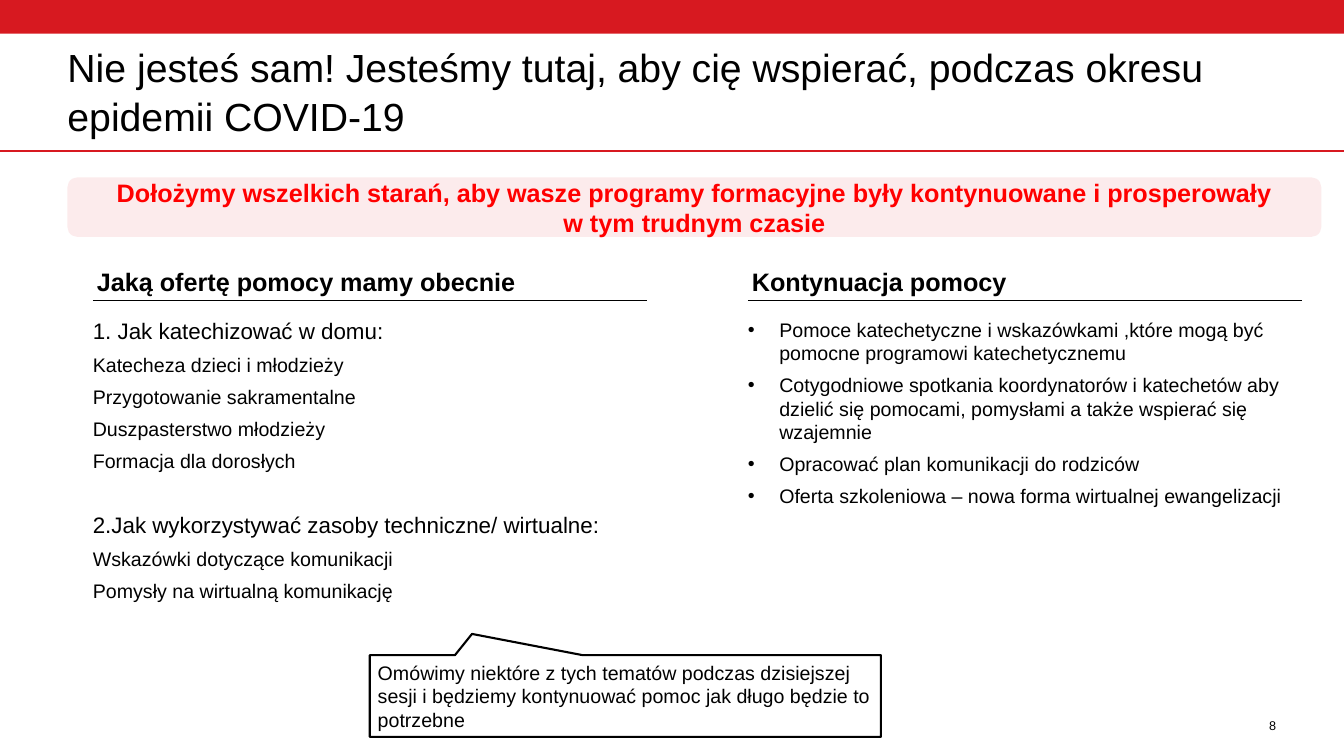
import pptx
import pptx.dml.color
import pptx.enum.shapes
import pptx.enum.text
import pptx.oxml
import pptx.oxml.ns
import pptx.util
from pptx.util import Cm

RED = pptx.dml.color.RGBColor(0xD7, 0x19, 0x20)
BRIGHT_RED = pptx.dml.color.RGBColor(0xFF, 0x00, 0x00)
PINK = pptx.dml.color.RGBColor(0xF9, 0xCF, 0xD0)
BLACK = pptx.dml.color.RGBColor(0x00, 0x00, 0x00)
WHITE = pptx.dml.color.RGBColor(0xFF, 0xFF, 0xFF)

SHAPE = pptx.enum.shapes.MSO_SHAPE
ANCHOR = pptx.enum.text.MSO_ANCHOR
ALIGN = pptx.enum.text.PP_ALIGN
SLIDE_WIDTH = 33.87
COLUMN_WIDTH = 13.97

OFFER = [
    ("1. Jak katechizować w domu:", 16),
    ("Katecheza dzieci i młodzieży", 14),
    ("Przygotowanie sakramentalne", 14),
    ("Duszpasterstwo młodzieży", 14),
    ("Formacja dla dorosłych", 14),
    ("2.Jak wykorzystywać zasoby techniczne/ wirtualne:", 16),
    ("Wskazówki dotyczące komunikacji", 14),
    ("Pomysły na wirtualną komunikację", 14),
]
CONTINUATION = [
    ("Pomoce katechetyczne i wskazówkami ,które mogą być pomocne programowi katechetycznemu", 14),
    ("Cotygodniowe spotkania koordynatorów i katechetów aby dzielić się pomocami, "
     "pomysłami a także wspierać się wzajemnie", 14),
    ("Opracować plan komunikacji do rodziców", 14),
    ("Oferta szkoleniowa – nowa forma wirtualnej ewangelizacji", 14),
]


def apply(target, formats):
    """Set every attribute named in formats on target."""
    for name, value in formats.items():
        setattr(target, name, value)


def add_xml(parent, tag, **attributes):
    """Append a drawing element with the given attributes to parent."""
    element = pptx.oxml.parse_xml(f"<{tag} {pptx.oxml.ns.nsdecls('a')}/>")
    for name, value in attributes.items():
        element.set(name, value)
    parent.append(element)


def write(frame, lines, color=BLACK, bold=False, margin=0, anchor=ANCHOR.TOP, **paragraph_formats):
    """Fill a text frame with (text, size) lines and return its paragraphs."""
    sides = ("margin_left", "margin_top", "margin_right", "margin_bottom")
    apply(frame, dict.fromkeys(sides, Cm(margin)))
    apply(frame, {"word_wrap": True, "vertical_anchor": anchor,
                  "auto_size": pptx.enum.text.MSO_AUTO_SIZE.NONE})
    for index, (text, size) in enumerate(lines):
        paragraph = frame.add_paragraph() if index else frame.paragraphs[0]
        apply(paragraph, {"alignment": ALIGN.LEFT, **paragraph_formats})
        run = paragraph.add_run()
        run.text = text
        apply(run.font, {"name": "Arial", "size": pptx.util.Pt(size), "bold": bold})
        run.font.color.rgb = color
    return frame.paragraphs


def add_block(slide, kind, left, top, width, height, fill):
    """Add a flat, borderless preset shape."""
    block = slide.shapes.add_shape(kind, Cm(left), Cm(top), Cm(width), Cm(height))
    block.shadow.inherit = False
    block.fill.solid()
    block.fill.fore_color.rgb = fill
    block.line.fill.background()
    return block


def add_text(slide, left, top, width, height):
    """Add a text box and return its text frame."""
    return slide.shapes.add_textbox(Cm(left), Cm(top), Cm(width), Cm(height)).text_frame


def add_rule(slide, left, top, width, color, weight):
    """Draw a horizontal line."""
    rule = slide.shapes.add_connector(pptx.enum.shapes.MSO_CONNECTOR.STRAIGHT,
                                      Cm(left), Cm(top), Cm(left + width), Cm(top))
    rule.line.color.rgb = color
    rule.line.width = pptx.util.Pt(weight)
    add_xml(rule._element.spPr, "a:effectLst")


def add_header(slide, left, top, width, height):
    """Place the title between the red bar and the red line."""
    add_block(slide, SHAPE.RECTANGLE, 0, 0, SLIDE_WIDTH, 0.85, RED)
    add_rule(slide, 0, top + height + 0.3, SLIDE_WIDTH, RED, 1.5)
    title = slide.shapes.title
    apply(title, {"left": Cm(left), "top": Cm(top), "width": Cm(width), "height": Cm(height)})
    write(title.text_frame,
          [("Nie jesteś sam! Jesteśmy tutaj, aby cię wspierać, podczas okresu epidemii COVID-19", 28)],
          anchor=ANCHOR.BOTTOM, line_spacing=pptx.util.Pt(35))


def add_banner(slide, left, top, width, height):
    """Place the pledge on a translucent pink band."""
    banner = add_block(slide, SHAPE.ROUNDED_RECTANGLE, left, top, width, height, PINK)
    pink = banner._element.spPr.find(".//" + pptx.oxml.ns.qn("a:srgbClr"))
    add_xml(pink, "a:alpha", val="40000")
    write(banner.text_frame,
          [("Dołożymy wszelkich starań, aby wasze programy formacyjne były kontynuowane i prosperowały", 18),
           ("w tym trudnym czasie", 18)],
          color=BRIGHT_RED, bold=True, margin=0.13, anchor=ANCHOR.MIDDLE, alignment=ALIGN.CENTER)


def add_column(slide, left, top, heading, lines, body_height):
    """Place an underlined heading with its lines below and return their paragraphs."""
    write(add_text(slide, left, top, COLUMN_WIDTH, 0.97), [(heading, 18)],
          bold=True, margin=0.1, anchor=ANCHOR.BOTTOM)
    add_rule(slide, left, top + 0.97, COLUMN_WIDTH, BLACK, 0.75)
    return write(add_text(slide, left, top + 1.4, COLUMN_WIDTH, body_height), lines,
                 space_after=pptx.util.Pt(6))


def add_columns(slide, left, top, pitch):
    """Place the current offer beside the bulleted continuation."""
    offer = add_column(slide, left, top, "Jaką ofertę pomocy mamy obecnie", OFFER, 7.26)
    offer[5].space_before = pptx.util.Pt(22)
    for paragraph in add_column(slide, left + pitch, top, "Kontynuacja pomocy", CONTINUATION, 4.83):
        properties = paragraph._p.get_or_add_pPr()
        properties.set("marL", str(Cm(0.79)))
        properties.set("indent", str(-Cm(0.79)))
        add_xml(properties, "a:buFont", typeface="Arial")
        add_xml(properties, "a:buChar", char="•")


def add_callout(slide, left, top, width, height):
    """Place the note that points up to the offer."""
    callout = add_block(slide, SHAPE.RECTANGULAR_CALLOUT, left, top, width, height, WHITE)
    callout.adjustments[0] = -0.3
    callout.adjustments[1] = -0.76
    callout.line.color.rgb = BLACK
    callout.line.width = pptx.util.Pt(1.5)
    write(callout.text_frame,
          [("Omówimy niektóre z tych tematów podczas dzisiejszej sesji i będziemy "
            "kontynuować pomoc jak długo będzie to potrzebne", 14)],
          margin=0.2, anchor=ANCHOR.MIDDLE)


def main():
    """Build the slide and save it."""
    presentation = pptx.Presentation()
    apply(presentation, {"slide_width": Cm(SLIDE_WIDTH), "slide_height": Cm(19.05)})
    slide = presentation.slides.add_slide(presentation.slide_layouts[5])
    add_header(slide, 1.7, 1.27, 30.48, 2.24)
    add_banner(slide, 1.7, 4.47, 31.6, 1.5)
    add_columns(slide, 2.34, 6.6, 16.51)
    add_callout(slide, 9.32, 16.51, 12.88, 2.06)
    write(add_text(slide, 30.81, 18.08, 1.35, 0.46), [("8", 9)], alignment=ALIGN.RIGHT)
    presentation.save("out.pptx")


if __name__ == "__main__":
    main()
